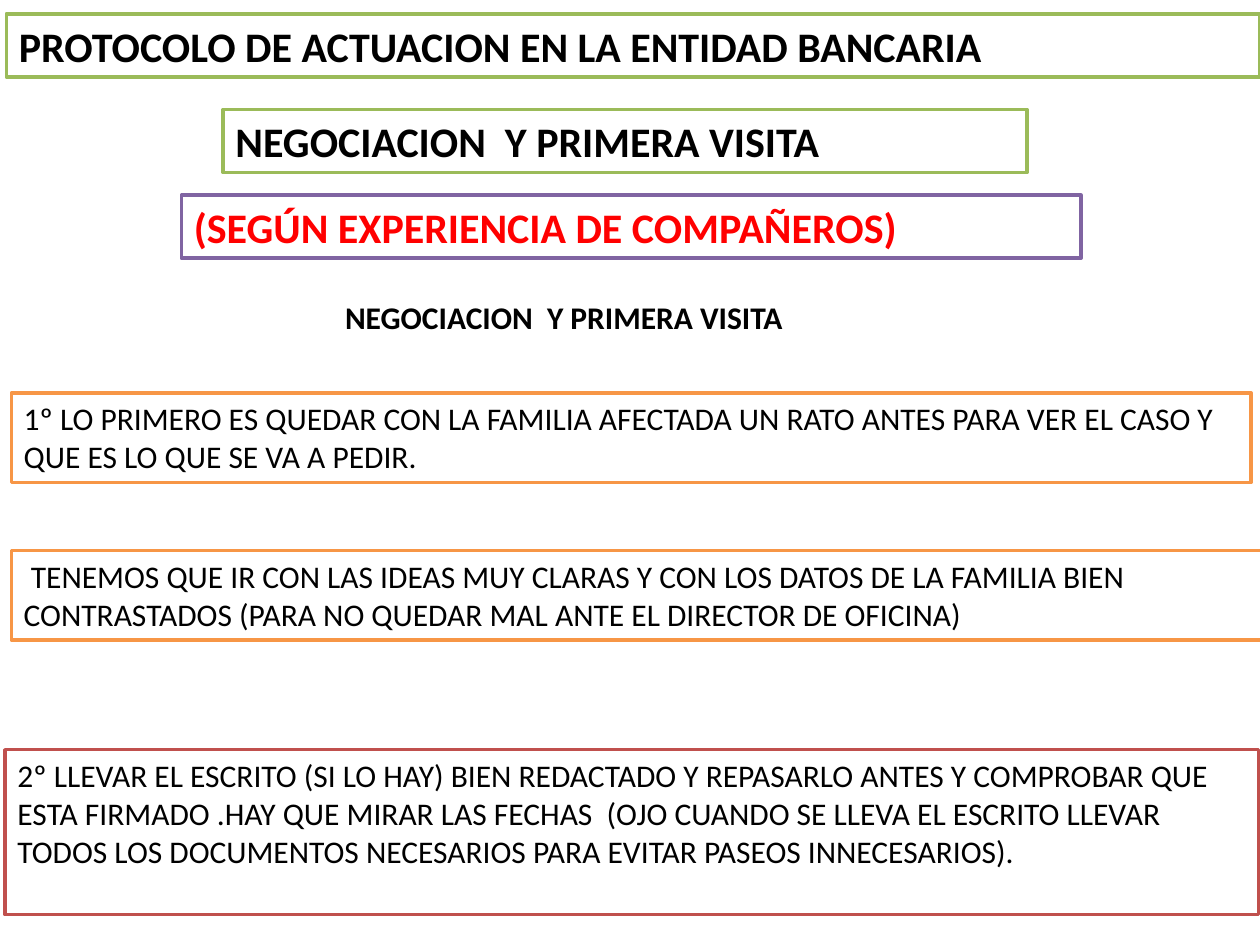
from dataclasses import dataclass

from pptx import Presentation
from pptx.dml.color import RGBColor
from pptx.enum.shapes import MSO_SHAPE
from pptx.enum.text import MSO_ANCHOR, MSO_AUTO_SIZE, PP_ALIGN
from pptx.util import Inches, Pt

RECTANGLE = MSO_SHAPE.RECTANGLE
TOP = MSO_ANCHOR.TOP
LEFT = PP_ALIGN.LEFT
NO_AUTOFIT = MSO_AUTO_SIZE.NONE
TITLE_ONLY_LAYOUT = 5

FONT = "Calibri"
HEADING_SIZE = 24
BODY_SIZE = 18
HEADING_HEIGHT = 0.5
STEP_HEIGHT = 0.71
COLORS = {
    "white": "FFFFFF",
    "black": "000000",
    "red": "FF0000",
    "green": "9BBB59",
    "purple": "8064A2",
    "orange": "F79646",
    "brick": "C0504D",
}


@dataclass(frozen=True)
class Box:
    text: str
    left: float
    top: float
    width: float
    height: float
    border: str
    size: int = BODY_SIZE
    bold: bool = False
    color: str = "black"


TITLE = Box("PROTOCOLO DE ACTUACION EN LA ENTIDAD BANCARIA",
            0.05, 0.11, 9.95, HEADING_HEIGHT, "green", HEADING_SIZE, True)
TOPIC = "NEGOCIACION  Y PRIMERA VISITA"

BOXES = [
    # Headings
    Box(TOPIC, 1.77, 0.87, 6.38, HEADING_HEIGHT, "green", HEADING_SIZE, True),
    Box("(SEGÚN EXPERIENCIA DE COMPAÑEROS)",
        1.44, 1.55, 7.14, HEADING_HEIGHT, "purple", HEADING_SIZE, True, "red"),
    # Steps
    Box("1º LO PRIMERO ES QUEDAR CON LA FAMILIA AFECTADA UN RATO ANTES PARA "
        "VER EL CASO Y QUE ES LO QUE SE VA A PEDIR.",
        0.09, 3.12, 9.84, STEP_HEIGHT, "orange"),
    Box(" TENEMOS QUE IR CON LAS IDEAS MUY CLARAS Y CON LOS DATOS DE LA "
        "FAMILIA BIEN CONTRASTADOS (PARA NO QUEDAR MAL ANTE EL DIRECTOR DE "
        "OFICINA)",
        0.09, 4.37, 10, STEP_HEIGHT, "orange"),
    Box("2º LLEVAR EL ESCRITO (SI LO HAY) BIEN REDACTADO Y REPASARLO ANTES Y "
        "COMPROBAR QUE ESTA FIRMADO .HAY QUE MIRAR LAS FECHAS  (OJO CUANDO SE "
        "LLEVA EL ESCRITO LLEVAR TODOS LOS DOCUMENTOS NECESARIOS PARA EVITAR "
        "PASEOS INNECESARIOS).",
        0.04, 5.95, 9.95, 1.31, "brick"),
]


def rgb(name: str) -> RGBColor:
    return RGBColor.from_string(COLORS[name])


def write_text(shape, text: str, *, size: int = BODY_SIZE, bold: bool = False,
               color: str = "black", wrap: bool = True) -> None:
    frame = shape.text_frame
    frame.auto_size = NO_AUTOFIT
    frame.word_wrap = wrap
    frame.vertical_anchor = TOP
    paragraph = frame.paragraphs[0]
    paragraph.alignment = LEFT
    run = paragraph.add_run()
    run.text = text
    run.font.name = FONT
    run.font.size = Pt(size)
    run.font.bold = bold
    run.font.color.rgb = rgb(color)


def format_box(shape, box: Box) -> None:
    shape.fill.solid()
    shape.fill.fore_color.rgb = rgb("white")
    shape.line.color.rgb = rgb(box.border)
    shape.line.width = Pt(2)
    write_text(shape, box.text, size=box.size, bold=box.bold, color=box.color)


def place_title(slide, box: Box) -> None:
    title = slide.shapes.title
    title.left, title.top = Inches(box.left), Inches(box.top)
    title.width, title.height = Inches(box.width), Inches(box.height)
    format_box(title, box)


def draw_box(slide, box: Box) -> None:
    shape = slide.shapes.add_shape(
        RECTANGLE, Inches(box.left), Inches(box.top),
        Inches(box.width), Inches(box.height))
    shape.shadow.inherit = False
    format_box(shape, box)


def main() -> None:
    prs = Presentation()
    prs.slide_width, prs.slide_height = Inches(10), Inches(7.5)
    slide = prs.slides.add_slide(prs.slide_layouts[TITLE_ONLY_LAYOUT])

    place_title(slide, TITLE)
    for box in BOXES:
        draw_box(slide, box)

    # Unframed section label
    section_label = slide.shapes.add_textbox(
        Inches(2.64), Inches(2.32), Inches(3.77), Inches(0.4))
    write_text(section_label, TOPIC, bold=True, wrap=False)

    prs.save("out.pptx")


if __name__ == "__main__":
    main()
